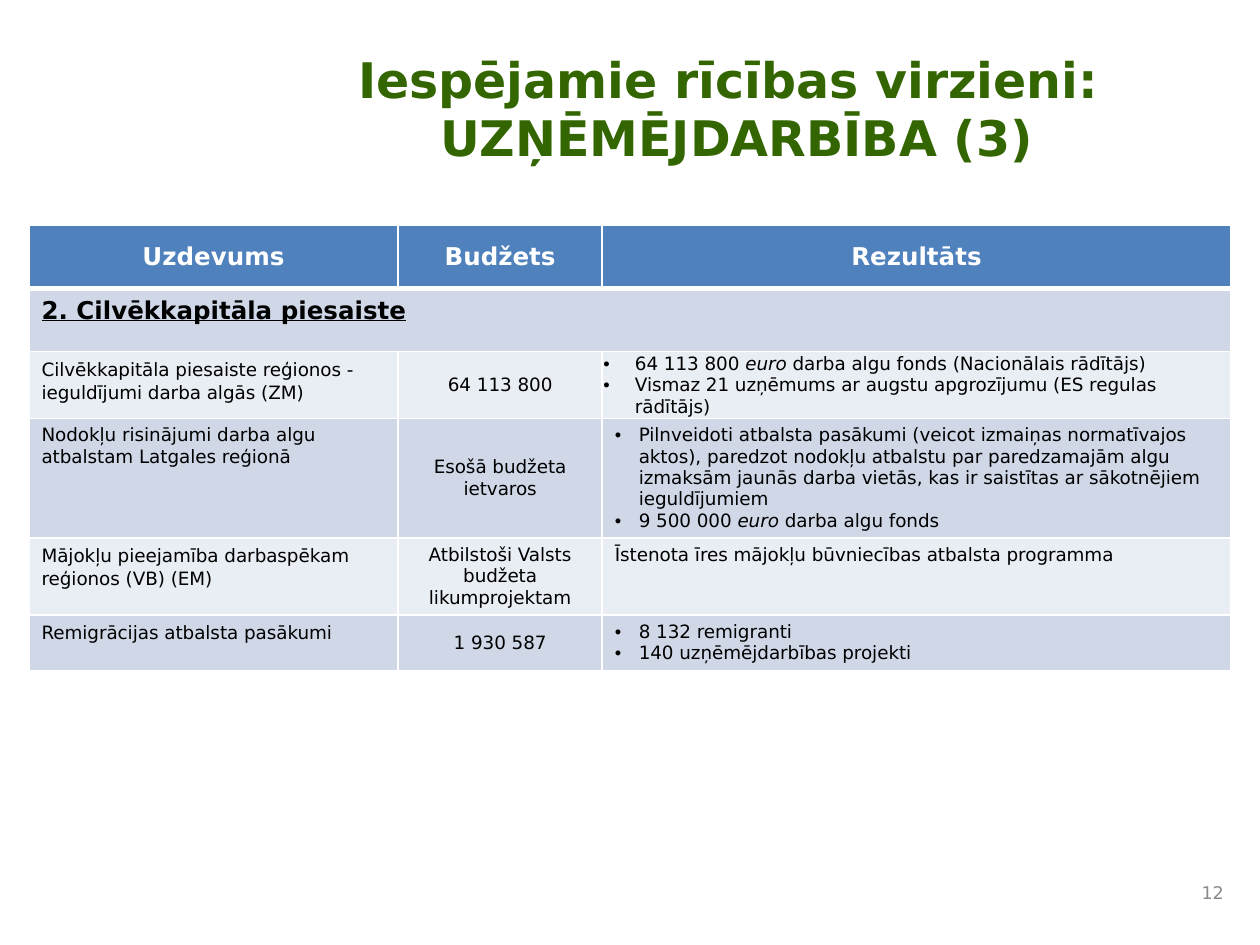
from lxml import etree
from pptx import Presentation, util as u
from pptx.dml.color import RGBColor
from pptx.enum import text as t
from pptx.oxml import ns

COLORS = {"white": "FFFFFF", "black": "000000", "title": "336600", "number": "898989",
          "header": "4F81BD", "dark": "D0D8E8", "light": "E9EDF4"}
FONT = "DejaVu Sans"
COLUMNS = [2.93, 1.62, 4.99]
ROWS = [0.5, 0.5, 0.53, 0.95, 0.61, 0.43]
LEFT, TOP = 0.23, 1.79
MIDDLE, CENTER = t.MSO_ANCHOR.MIDDLE, t.PP_ALIGN.CENTER

HEAD = {"size": 14, "bold": True, "color": "white", "align": CENTER, "anchor": MIDDLE}
SECTION = {"size": 14, "bold": True, "underline": True, "spacing": 1.07}
TASK = {"spacing": 1.07}
PLAIN = {}
BUDGET = {"align": CENTER, "anchor": MIDDLE}
TIGHT = {"anchor": MIDDLE, "margins": (0.01, 0.01, 0.01, 0)}
TIGHT_BUDGET = {**BUDGET, **TIGHT}
BULLETS = {"bullet": 0.19}
TIGHT_BULLETS = {**TIGHT, "bullet": 0.25}

# Asterisks enclose italic words.
CONTENT = [
    [(["Uzdevums"], HEAD), (["Budžets"], HEAD), (["Rezultāts"], HEAD)],
    [(["2. Cilvēkkapitāla piesaiste"], SECTION)],
    [(["Cilvēkkapitāla piesaiste reģionos - ieguldījumi darba algās (ZM)"], TASK),
     (["64 113 800"], TIGHT_BUDGET),
     (["64 113 800 *euro* darba algu fonds (Nacionālais rādītājs)",
       "Vismaz 21 uzņēmums ar augstu apgrozījumu (ES regulas rādītājs)"], TIGHT_BULLETS)],
    [(["Nodokļu risinājumi darba algu atbalstam Latgales reģionā"], PLAIN),
     (["Esošā budžeta ietvaros"], BUDGET),
     (["Pilnveidoti atbalsta pasākumi (veicot izmaiņas normatīvajos aktos), paredzot "
       "nodokļu atbalstu par paredzamajām algu izmaksām jaunās darba vietās, kas ir "
       "saistītas ar sākotnējiem ieguldījumiem",
       "9 500 000 *euro* darba algu fonds"], BULLETS)],
    [(["Mājokļu pieejamība darbaspēkam reģionos (VB) (EM)"], TASK),
     (["Atbilstoši Valsts budžeta likumprojektam"], BUDGET),
     (["Īstenota īres mājokļu būvniecības atbalsta programma"], PLAIN)],
    [(["Remigrācijas atbalsta pasākumi"], TASK),
     (["1 930 587"], TIGHT_BUDGET),
     (["8 132 remigranti", "140 uzņēmējdarbības projekti"], BULLETS)],
]


def color(name):
    return RGBColor.from_string(COLORS[name])


def add_bullet(para, indent):
    props = para._p.get_or_add_pPr()
    props.set("marL", str(u.Inches(indent)))
    props.set("indent", str(-u.Inches(indent)))
    etree.SubElement(props, ns.qn("a:buFont"), typeface="Arial")
    etree.SubElement(props, ns.qn("a:buChar"), char="•")


def add_span(para, words, style, italic):
    span = para.add_run()
    span.text = words
    values = {"name": FONT, "size": u.Pt(style.get("size", 10.5)), "italic": italic,
              "bold": style.get("bold", False), "underline": style.get("underline", False)}
    for name, value in values.items():
        setattr(span.font, name, value)
    span.font.color.rgb = color(style.get("color", "black"))


def write(frame, paragraphs, style):
    """Fill a text frame; a newline within a paragraph is a line break."""
    for index, content in enumerate(paragraphs):
        para = frame.add_paragraph() if index else frame.paragraphs[0]
        values = {"alignment": style.get("align", t.PP_ALIGN.LEFT),
                  "line_spacing": style.get("spacing", 1.0)}
        for name, value in values.items():
            setattr(para, name, value)
        if "bullet" in style:
            add_bullet(para, style["bullet"])
        for number, line in enumerate(content.split("\n")):
            if number:
                para.add_line_break()
            for part, words in enumerate(line.split("*")):
                add_span(para, words, style, part % 2 == 1)


def add_borders(cell, bottom):
    props = cell._tc.get_or_add_tcPr()
    for side, width in (("L", 1), ("R", 1), ("T", 1), ("B", bottom)):
        line = etree.SubElement(props, ns.qn(f"a:ln{side}"), w=str(u.Pt(width)))
        fill = etree.SubElement(line, ns.qn("a:solidFill"))
        etree.SubElement(fill, ns.qn("a:srgbClr"), val=COLORS["white"])


def fill_cell(cell, paragraphs, style):
    cell.vertical_anchor = style.get("anchor", t.MSO_ANCHOR.TOP)
    sides = ("left", "top", "right", "bottom")
    for side, margin in zip(sides, style.get("margins", (0.1, 0.05, 0.1, 0.05))):
        setattr(cell, f"margin_{side}", u.Inches(margin))
    write(cell.text_frame, paragraphs, style)


def add_task_table(page):
    table = page.shapes.add_table(
        len(ROWS), len(COLUMNS), u.Inches(LEFT), u.Inches(TOP),
        u.Inches(sum(COLUMNS)), u.Inches(sum(ROWS))).table
    table.horz_banding = False
    for column, width in zip(table.columns, COLUMNS):
        column.width = u.Inches(width)
    for index, (row, height) in enumerate(zip(table.rows, ROWS)):
        row.height = u.Inches(height)
        shade = ("dark" if index % 2 else "light") if index else "header"
        for cell in row.cells:
            add_borders(cell, 1 if index else 3)
            cell.fill.solid()
            cell.fill.fore_color.rgb = color(shade)
        for cell, (paragraphs, style) in zip(row.cells, CONTENT[index]):
            fill_cell(cell, paragraphs, style)
    table.cell(1, 0).merge(table.cell(1, len(COLUMNS) - 1))


def add_text(page, place, content, style):
    box = page.shapes.add_textbox(*map(u.Inches, place))
    frame = box.text_frame
    frame.word_wrap = True
    frame.vertical_anchor = style.get("anchor", t.MSO_ANCHOR.TOP)
    write(frame, [content], style)


def main():
    deck = Presentation()
    deck.slide_width, deck.slide_height = u.Inches(10), u.Inches(7.5)
    page = deck.slides.add_slide(deck.slide_layouts[6])
    add_task_table(page)
    add_text(page, (2.24, 0.34, 7.21, 0.91),
             "Iespējamie rīcības virzieni: \nUZŅĒMĒJDARBĪBA (3)",
             {"size": 28, "bold": True, "color": "title", "align": CENTER})
    add_text(page, (9.33, 6.92, 0.48, 0.33), "12",
             {"size": 10, "color": "number", "align": t.PP_ALIGN.RIGHT, "anchor": MIDDLE})
    deck.save("out.pptx")


if __name__ == "__main__":
    main()
